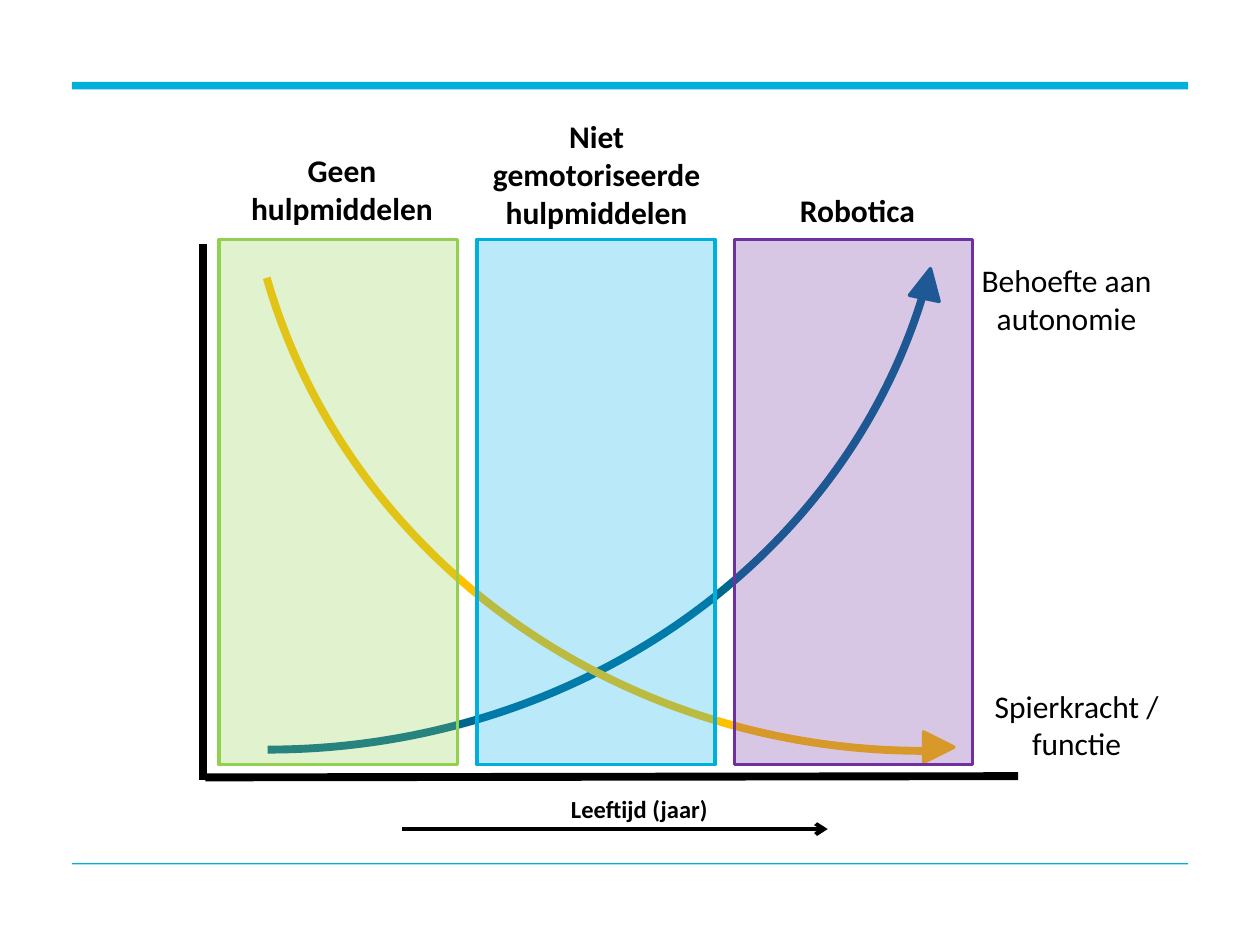
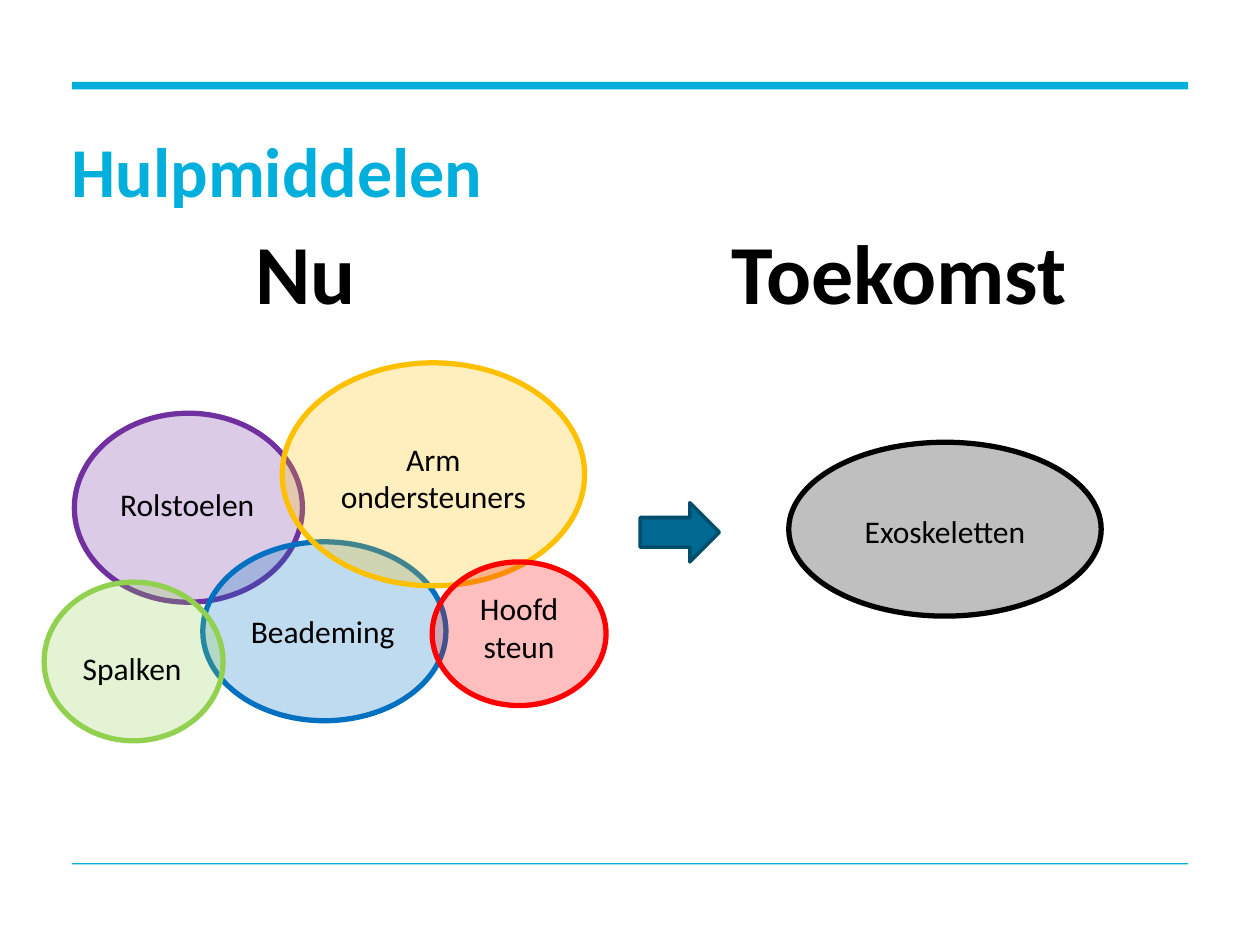
from dataclasses import dataclass

import pptx
import pptx.dml.color
import pptx.enum.shapes
import pptx.enum.text
import pptx.oxml
import pptx.oxml.ns
import pptx.util

Inches = pptx.util.Inches
Pt = pptx.util.Pt
qn = pptx.oxml.ns.qn
SHAPE = pptx.enum.shapes.MSO_SHAPE
ALIGN = pptx.enum.text.PP_ALIGN
ANCHOR = pptx.enum.text.MSO_ANCHOR
DRAWING_NS = "http://schemas.openxmlformats.org/drawingml/2006/main"


@dataclass(frozen=True)
class Theme:
    font: str = "Calibri"
    black: str = "000000"
    cyan: str = "00AFDC"
    sky: str = "00B0F0"
    petrol: str = "006991"
    petrol_curve: str = "00678E"
    petrol_edge: str = "004E6B"
    amber: str = "FFC000"
    green: str = "92D050"
    purple: str = "7030A0"
    blue: str = "0070C0"
    red: str = "FF0000"
    small: int = 14
    body: int = 18
    title: int = 40
    heading: int = 48
    axis_line: float = 4.5
    edge_line: float = 2
    bubble_line: float = 3


THEME = Theme()


def rgb(value):
    return pptx.dml.color.RGBColor.from_string(value)


def add_drawing_child(parent, tag, **attributes):
    child = pptx.oxml.parse_xml(f'<a:{tag} xmlns:a="{DRAWING_NS}"/>')
    for name, value in attributes.items():
        child.set(name, str(value))
    parent.append(child)


def write_text(frame, text, size=THEME.body, bold=False, color=THEME.black,
               align=ALIGN.CENTER, anchor=ANCHOR.TOP, line_spacing=None):
    """Fill a text frame, one paragraph for each line of the text."""
    frame.word_wrap = True
    frame.vertical_anchor = anchor
    frame.text = text
    for para in frame.paragraphs:
        para.alignment = align
        if line_spacing:
            para.line_spacing = Pt(line_spacing)
        para.font.name = THEME.font
        para.font.size = Pt(size)
        para.font.bold = bold
        para.font.color.rgb = rgb(color)


def add_text(page, at, text, **text_format):
    box = page.shapes.add_textbox(*map(Inches, at))
    write_text(box.text_frame, text, **text_format)
    return box


def add_shape(page, preset, at, fill=None, opacity=100, line=None, width=THEME.edge_line):
    shape = page.shapes.add_shape(preset, *map(Inches, at))
    shape.shadow.inherit = False
    if fill:
        shape.fill.solid()
        shape.fill.fore_color.rgb = rgb(fill)
        if opacity < 100:
            color = shape.element.spPr.find(qn("a:solidFill"))[0]
            add_drawing_child(color, "alpha", val=opacity * 1000)
    else:
        shape.fill.background()
    if line:
        shape.line.color.rgb = rgb(line)
        shape.line.width = Pt(width)
    else:
        shape.line.fill.background()
    return shape


def add_line(page, start, end, width, arrow=False):
    line = page.shapes.add_connector(
        pptx.enum.shapes.MSO_CONNECTOR.STRAIGHT, *map(Inches, start + end))
    line.line.color.rgb = rgb(THEME.black)
    line.line.width = Pt(width)
    if arrow:
        add_drawing_child(line.line._get_or_add_ln(), "tailEnd", type="arrow")
    add_drawing_child(line.element.spPr, "effectLst")


def add_curve(page, at, color, flips):
    """Draw an arc; its angles are in units of 100000 / 60000 degree."""
    curve = add_shape(page, SHAPE.ARC, at, line=color, width=THEME.axis_line)
    curve.adjustments[0] = 162
    curve.adjustments[1] = 207.43
    for flip in flips:
        curve.element.spPr.xfrm.set(flip, "1")


def add_curve_tip(page, left, top, color, rotation):
    tip = add_shape(page, SHAPE.ISOSCELES_TRIANGLE, (left, top, 0.24, 0.24),
                    fill=color, line=color)
    tip.rotation = rotation


def add_bubble(page, at, text, color, align=ALIGN.CENTER, top_inset=0.35):
    bubble = add_shape(page, SHAPE.OVAL, at, fill=color, opacity=25,
                       line=color, width=THEME.bubble_line)
    write_text(bubble.text_frame, text, align=align)
    bubble.text_frame.margin_top = Inches(top_inset)


def add_page(deck):
    """Add a blank page with the two cyan rules."""
    page = deck.slides.add_slide(deck.slide_layouts[6])
    for top, height in ((0.65, 0.06), (6.85, 0.01)):
        add_shape(page, SHAPE.RECTANGLE, (0.57, top, 8.86, height), fill=THEME.cyan)
    return page


def build_autonomy_page(deck):
    page = add_page(deck)

    # Axes
    add_line(page, (1.61, 1.94), (1.61, 6.19), THEME.axis_line)
    add_line(page, (8.08, 6.16), (1.63, 6.17), THEME.axis_line)

    # Rising need and falling strength
    add_curve(page, (-3.27, -3.89, 10.79, 9.84), THEME.petrol_curve, ["flipV"])
    add_curve(page, (1.93, -4.2, 10.79, 10.16), THEME.amber, ["flipH", "flipV"])
    add_curve_tip(page, 7.24, 2.13, THEME.petrol, 11.7)
    add_curve_tip(page, 7.33, 5.81, THEME.amber, 90)
    add_text(page, (7.6, 2.02, 1.73, 0.71), "Behoefte aan autonomie")
    add_text(page, (7.68, 5.4, 1.73, 0.71), "Spierkracht / functie")

    # Age direction
    add_line(page, (3.19, 6.58), (6.57, 6.58), 2.25, arrow=True)
    add_text(page, (4.21, 6.25, 1.73, 0.34), "Leeftijd (jaar)", size=THEME.small, bold=True)

    # Phases with their headings
    phases = [
        (THEME.green, THEME.green, "Geen hulpmiddelen", (1.85, 1.15, 1.73, 0.71)),
        (THEME.sky, THEME.cyan, "Niet gemotoriseerde hulpmiddelen", (3.79, 0.88, 1.89, 1.01)),
        (THEME.purple, THEME.purple, "Robotica", (5.94, 1.47, 1.73, 0.4)),
    ]
    for index, (fill, edge, heading, heading_at) in enumerate(phases):
        add_shape(page, SHAPE.RECTANGLE, (1.74 + 2.045 * index, 1.9, 1.89, 4.17),
                  fill=fill, opacity=27, line=edge)
        add_text(page, heading_at, heading, bold=True)


def build_aids_page(deck):
    page = add_page(deck)

    # Title
    title = add_text(page, (0.57, 1.1, 8.86, 0.58), "Hulpmiddelen", size=THEME.title,
                     bold=True, color=THEME.cyan, align=ALIGN.LEFT,
                     anchor=ANCHOR.MIDDLE, line_spacing=42)
    frame = title.text_frame
    frame.margin_left = frame.margin_right = frame.margin_top = frame.margin_bottom = 0

    # Aids used now
    add_bubble(page, (0.59, 3.28, 1.81, 1.5), "Rolstoelen", THEME.purple, ALIGN.LEFT)
    add_bubble(page, (1.61, 4.3, 1.93, 1.42), "Beademing", THEME.blue, ALIGN.LEFT)
    add_bubble(page, (0.35, 4.62, 1.42, 1.26), "Spalken", THEME.green, ALIGN.LEFT)
    add_bubble(page, (2.24, 2.88, 2.4, 1.77), "Arm\nondersteuners", THEME.amber)
    add_bubble(page, (3.43, 4.46, 1.38, 1.14), "Hoofd steun", THEME.red, top_inset=0.05)

    # Headings
    for left, width, heading in ((1.93, 1.42, "Nu"), (5.71, 3.15, "Toekomst")):
        add_text(page, (left, 1.7, width, 0.91), heading, size=THEME.heading,
                 bold=True, align=ALIGN.LEFT)

    # Step to the future
    add_shape(page, SHAPE.RIGHT_ARROW, (5.08, 3.99, 0.63, 0.47),
              fill=THEME.petrol, line=THEME.petrol_edge)
    add_bubble(page, (6.26, 3.51, 2.48, 1.38), "Exoskeletten", THEME.black)


def main():
    deck = pptx.Presentation()
    deck.slide_width = Inches(10)
    deck.slide_height = Inches(7.5)
    build_autonomy_page(deck)
    build_aids_page(deck)
    deck.save("out.pptx")


if __name__ == "__main__":
    main()
